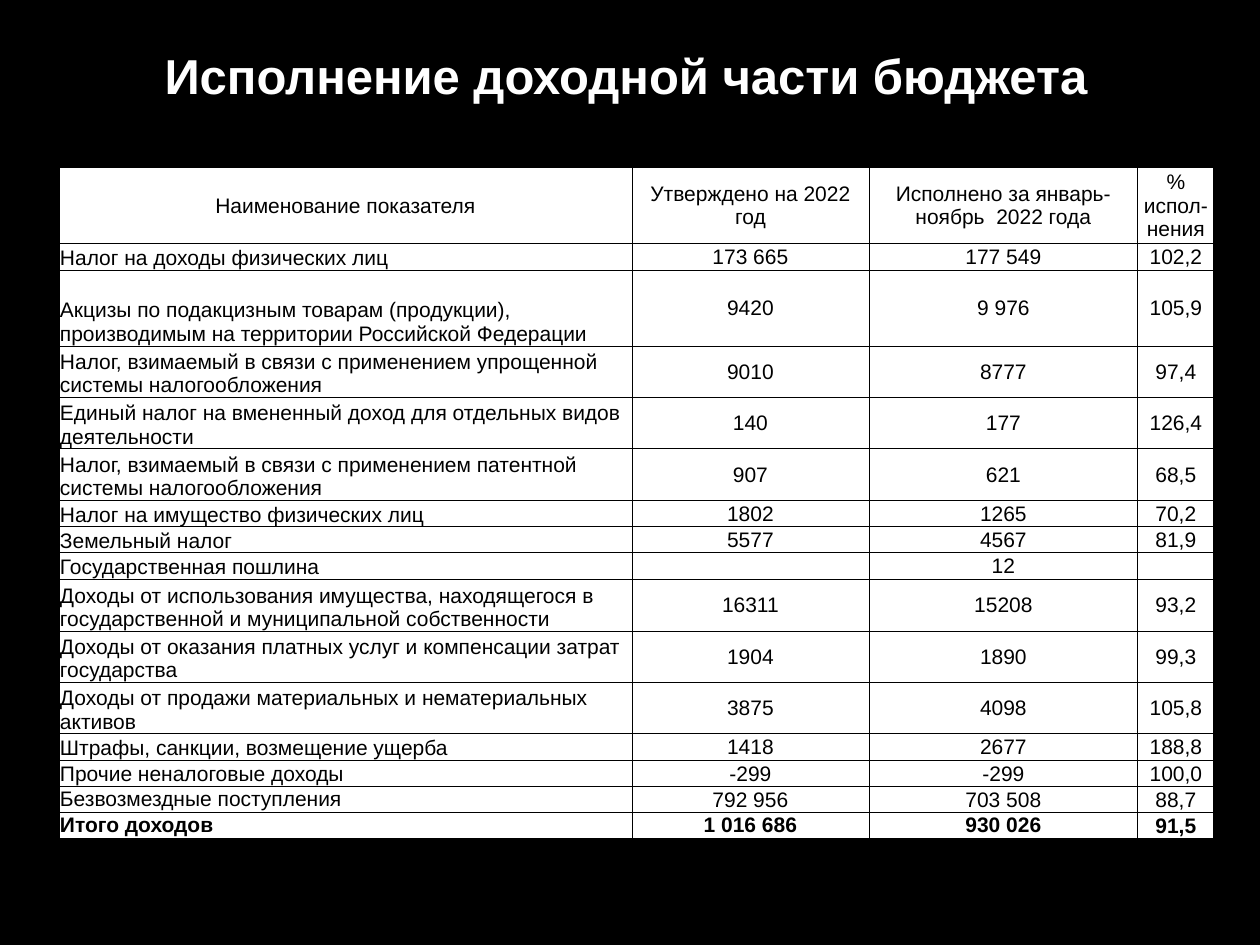
"""Build the slide on execution of the revenue side of the budget."""
import pptx
import pptx.util
from pptx.dml.color import RGBColor
from pptx.enum.text import MSO_ANCHOR, PP_ALIGN
from pptx.oxml.ns import qn
from lxml import etree

TITLE = "Исполнение доходной части бюджета"
HEADINGS = ("Наименование показателя", "Утверждено на 2022 год",
            "Исполнено за январь-ноябрь  2022 года", "% испол-нения")
REVENUES = [
    ("Налог на доходы физических лиц", "173 665", "177 549", "102,2"),
    ("Акцизы по подакцизным товарам (продукции), производимым на территории Российской Федерации",
     "9420", "9 976", "105,9"),
    ("Налог, взимаемый в связи с применением упрощенной системы налогообложения",
     "9010", "8777", "97,4"),
    ("Единый налог на вмененный доход для отдельных видов деятельности",
     "140", "177", "126,4"),
    ("Налог, взимаемый в связи с применением патентной системы налогообложения",
     "907", "621", "68,5"),
    ("Налог на имущество физических лиц", "1802", "1265", "70,2"),
    ("Земельный налог", "5577", "4567", "81,9"),
    ("Государственная пошлина", "", "12", ""),
    ("Доходы от использования имущества, находящегося в государственной и муниципальной собственности",
     "16311", "15208", "93,2"),
    ("Доходы от оказания платных услуг и компенсации затрат государства",
     "1904", "1890", "99,3"),
    ("Доходы от продажи материальных и нематериальных активов",
     "3875", "4098", "105,8"),
    ("Штрафы, санкции, возмещение ущерба", "1418", "2677", "188,8"),
    ("Прочие неналоговые доходы", "-299", "-299", "100,0"),
    ("Безвозмездные поступления", "792 956", "703 508", "88,7"),
]
TOTAL = ("Итого доходов", "1 016 686", "930 026", "91,5")
BUDGET = [HEADINGS, *REVENUES, TOTAL]
LAST = len(BUDGET) - 1

COLUMN_WIDTHS = (573, 237, 269, 76)
ROW_HEIGHTS = (76, 25, 76, 50, 51, 50, 25, 26, 25, 52, 50, 51, 25, 25, 26, 25)
COLORS = {"background": "000000", "title": "FFFFFF", "cell": "FFFFFF",
          "text": "000000", "border": "000000"}
FONT = "Arial"
TABLE_SIZE = 12


def px(length):
    return pptx.util.Emu(round(length * 914400 / 126))


def color(name):
    return RGBColor.from_string(COLORS[name])


def add_text(paragraph, text, size, color_name, bold=False):
    run = paragraph.add_run()
    run.text = text
    run.font.name = FONT
    run.font.size = pptx.util.Pt(size)
    run.font.bold = bold
    run.font.color.rgb = color(color_name)


def add_borders(cell):
    properties = cell._tc.get_or_add_tcPr()
    for position, side in enumerate(("lnL", "lnR", "lnT", "lnB")):
        line = etree.Element(qn(f"a:{side}"), w=str(pptx.util.Pt(0.5)))
        fill = etree.SubElement(line, qn("a:solidFill"))
        etree.SubElement(fill, qn("a:srgbClr"), val=COLORS["border"])
        properties.insert(position, line)


def cell_layout(row, column):
    if column == 0 and row >= LAST - 1:
        return MSO_ANCHOR.TOP, PP_ALIGN.JUSTIFY
    if column == 0 and row > 0:
        return MSO_ANCHOR.BOTTOM, PP_ALIGN.LEFT
    if row == LAST and column < 3:
        return MSO_ANCHOR.TOP, PP_ALIGN.CENTER
    return MSO_ANCHOR.MIDDLE, PP_ALIGN.CENTER


def fill_cell(cell, text, row, column):
    cell.fill.solid()
    cell.fill.fore_color.rgb = color("cell")
    add_borders(cell)
    cell.margin_left = cell.margin_right = cell.margin_top = px(1)
    cell.margin_bottom = 0
    paragraph = cell.text_frame.paragraphs[0]
    cell.vertical_anchor, paragraph.alignment = cell_layout(row, column)
    if text:
        add_text(paragraph, text, TABLE_SIZE, "text", row == LAST)
    else:
        etree.SubElement(paragraph._p, qn("a:endParaRPr"), sz=str(TABLE_SIZE * 100))


def main():
    deck = pptx.Presentation()
    deck.slide_width, deck.slide_height = px(1260), px(945)
    slide = deck.slides.add_slide(deck.slide_layouts[6])
    slide.background.fill.solid()
    slide.background.fill.fore_color.rgb = color("background")

    title = slide.shapes.add_textbox(px(59), px(29), px(1134), px(91)).text_frame
    title.word_wrap = True
    title.vertical_anchor = MSO_ANCHOR.MIDDLE
    title.paragraphs[0].alignment = PP_ALIGN.CENTER
    add_text(title.paragraphs[0], TITLE, 28, "title", True)

    table = slide.shapes.add_table(len(BUDGET), len(HEADINGS), px(59), px(167),
                                   px(sum(COLUMN_WIDTHS)), px(sum(ROW_HEIGHTS))).table
    for column, width in zip(table.columns, COLUMN_WIDTHS):
        column.width = px(width)
    for row, height in zip(table.rows, ROW_HEIGHTS):
        row.height = px(height)
    for row, entries in enumerate(BUDGET):
        for column, text in enumerate(entries):
            fill_cell(table.cell(row, column), text, row, column)

    deck.save("out.pptx")


if __name__ == "__main__":
    main()
